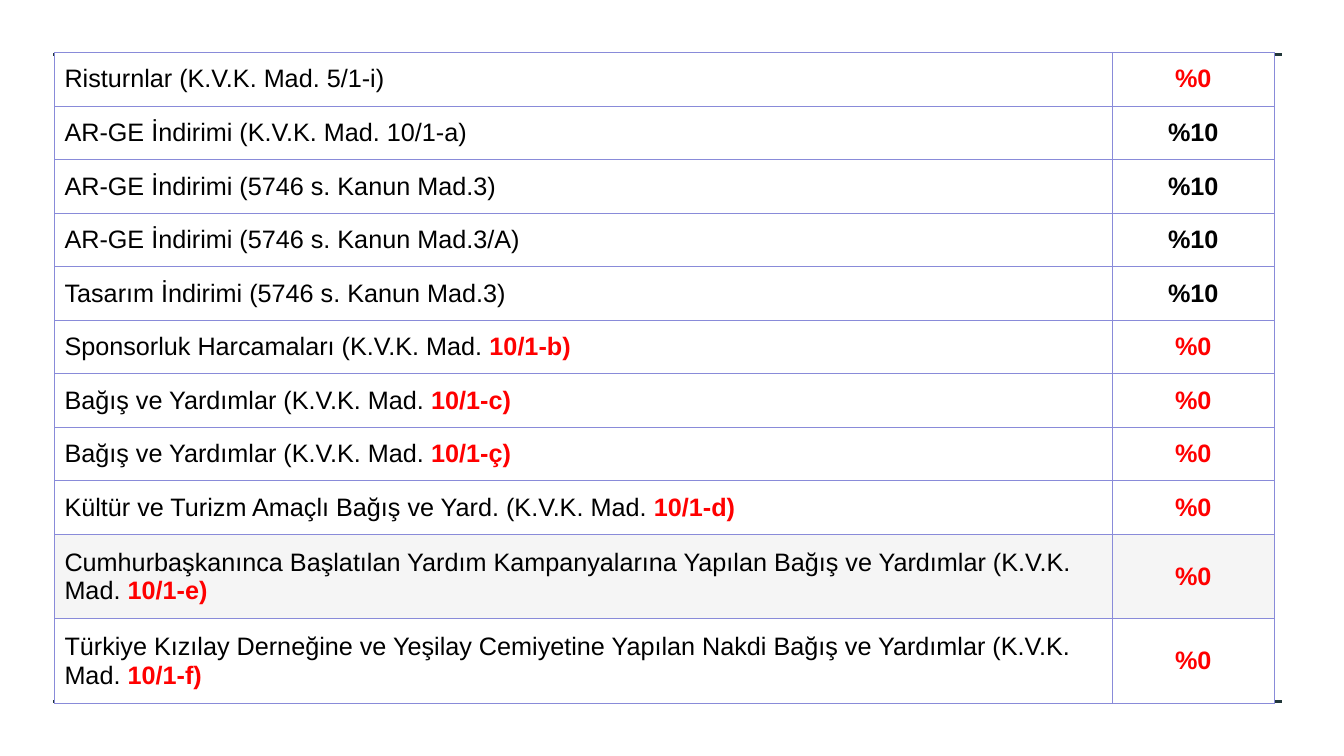
from dataclasses import dataclass

from lxml import etree
from pptx import Presentation
from pptx import util as u
from pptx.dml.color import RGBColor
from pptx.enum import shapes, text
from pptx.oxml import ns


@dataclass(frozen=True)
class Theme:
    font: str = "Arial"
    size: float = 18
    ink: str = "000000"
    accent: str = "FF0000"
    paper: str = "FFFFFF"
    shade: str = "F5F5F5"
    border: str = "898BD9"
    border_width: float = 0.75
    rule: str = "21373A"
    rule_width: float = 2.25


theme = Theme()
NBSP = chr(160)
ZERO, TEN = "%0", "%10"

# Plain wording, highlighted clause, rate
deductions = [
    ("Risturnlar (K.V.K. Mad. 5/1-i)", "", ZERO),
    ("AR-GE İndirimi (K.V.K. Mad. 10/1-a)", "", TEN),
    ("AR-GE İndirimi (5746 s. Kanun Mad.3)", "", TEN),
    ("AR-GE İndirimi (5746 s. Kanun Mad.3/A)", "", TEN),
    ("Tasarım İndirimi (5746 s. Kanun Mad.3)", "", TEN),
    ("Sponsorluk Harcamaları (K.V.K. Mad.", "10/1-b)", ZERO),
    ("Bağış ve Yardımlar (K.V.K. Mad.", "10/1-c)", ZERO),
    ("Bağış ve Yardımlar (K.V.K. Mad.", "10/1-ç)", ZERO),
    ("Kültür ve Turizm Amaçlı Bağış ve Yard. (K.V.K. Mad.", "10/1-d)", ZERO),
    ("Cumhurbaşkanınca Başlatılan Yardım Kampanyalarına Yapılan Bağış ve Yardımlar (K.V.K. Mad.",
     "10/1-e)", ZERO),
    ("Türkiye Kızılay Derneğine ve Yeşilay Cemiyetine Yapılan Nakdi Bağış ve Yardımlar (K.V.K. Mad.",
     "10/1-f)", ZERO),
]
SHADED_ROW = 9
TALL_ROWS = (9, 10)


def add_span(para, wording, color, bold):
    span = para.add_run()
    span.text = wording
    span.font.color.rgb = RGBColor.from_string(color)
    font_format = {"name": theme.font, "size": u.Pt(theme.size), "bold": bold}
    for name, value in font_format.items():
        setattr(span.font, name, value)


def format_cell(cell, fill):
    """Give a cell its insets, four borders and background."""
    cell_format = {"vertical_anchor": text.MSO_ANCHOR.MIDDLE}
    for side in ("left", "top", "right", "bottom"):
        cell_format[f"margin_{side}"] = u.Inches(0.1)
    for name, value in cell_format.items():
        setattr(cell, name, value)
    properties = cell._tc.get_or_add_tcPr()
    for edge in ("lnL", "lnR", "lnT", "lnB"):
        line = etree.SubElement(properties, ns.qn(f"a:{edge}"), w=str(u.Pt(theme.border_width)))
        solid = etree.SubElement(line, ns.qn("a:solidFill"))
        etree.SubElement(solid, ns.qn("a:srgbClr"), val=theme.border)
    cell.fill.solid()
    cell.fill.fore_color.rgb = RGBColor.from_string(fill)


deck = Presentation()
deck.slide_width, deck.slide_height = u.Inches(13.33), u.Inches(7.5)
page = deck.slides.add_slide(deck.slide_layouts[6])

# Heavy rules at the top and bottom edges of the table
for height in (0.54, 6.96):
    rule = page.shapes.add_connector(
        shapes.MSO_CONNECTOR.STRAIGHT,
        u.Inches(0.53), u.Inches(height), u.Inches(12.72), u.Inches(height))
    rule.line.color.rgb = RGBColor.from_string(theme.rule)
    rule.line.width = u.Pt(theme.rule_width)
    etree.SubElement(rule._element.spPr, ns.qn("a:effectLst"))

# Table of deductions and their rates
column_widths = (10.49, 1.61)
table_height, tall_height = 6.46, 0.84
short_height = (table_height - tall_height * len(TALL_ROWS)) / (len(deductions) - len(TALL_ROWS))
table = page.shapes.add_table(
    len(deductions), len(column_widths), u.Inches(0.54), u.Inches(0.52),
    u.Inches(sum(column_widths)), u.Inches(table_height)).table
for name in ("first_row", "horz_banding"):
    setattr(table, name, False)
for column, width in zip(table.columns, column_widths):
    column.width = u.Inches(width)

for index, (wording, clause, rate) in enumerate(deductions):
    table.rows[index].height = u.Inches(tall_height if index in TALL_ROWS else short_height)
    label_cell, rate_cell = table.cell(index, 0), table.cell(index, 1)
    for cell in (label_cell, rate_cell):
        format_cell(cell, theme.shade if index == SHADED_ROW else theme.paper)

    para = label_cell.text_frame.paragraphs[0]
    add_span(para, wording + NBSP if clause else wording, theme.ink, False)
    if clause:
        add_span(para, clause, theme.accent, True)

    para = rate_cell.text_frame.paragraphs[0]
    para.alignment = text.PP_ALIGN.CENTER
    add_span(para, rate, theme.accent if rate == ZERO else theme.ink, True)

deck.save("out.pptx")
